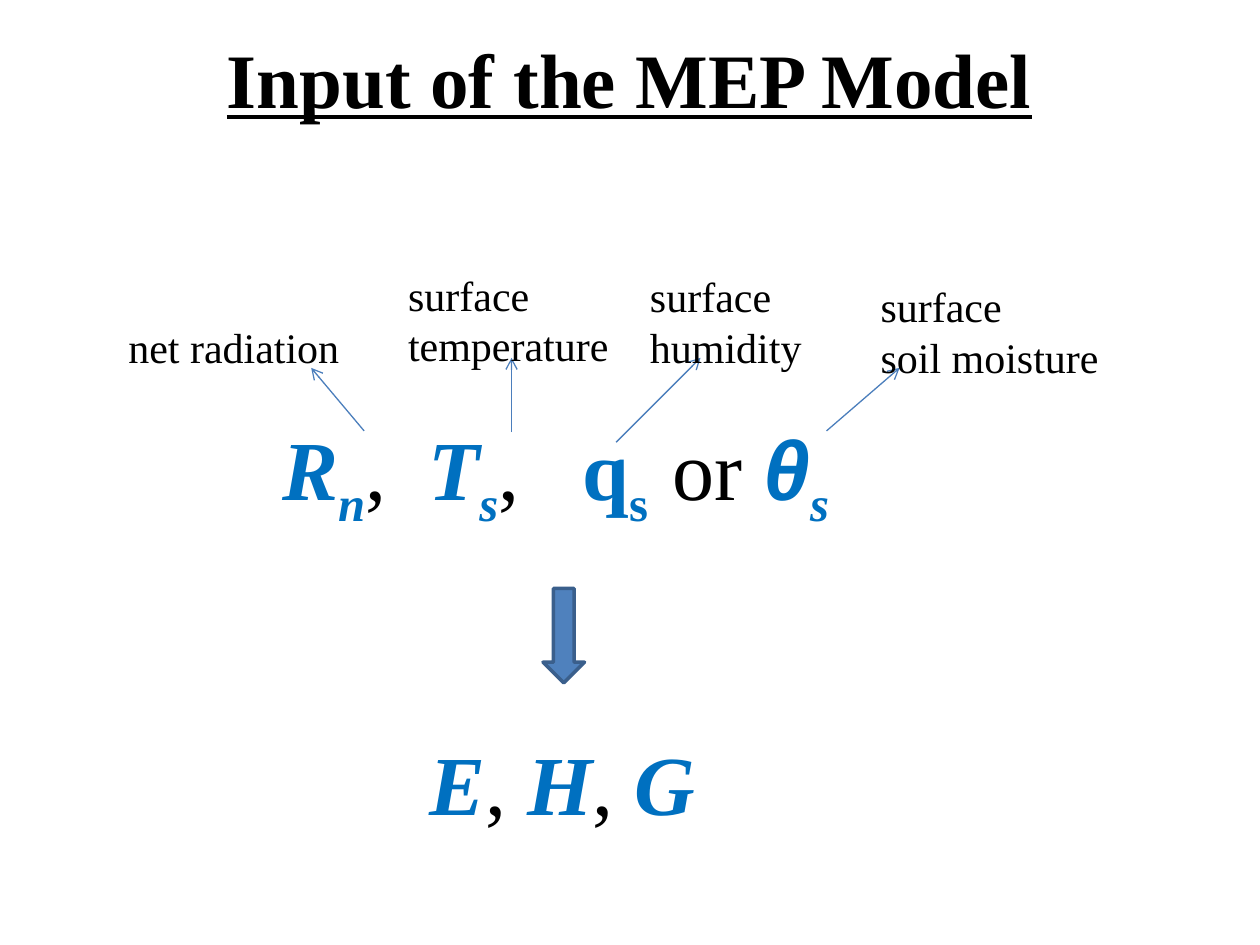
from lxml import etree
from pptx import Presentation
from pptx.dml.color import RGBColor
from pptx.enum.shapes import MSO_CONNECTOR, MSO_SHAPE
from pptx.enum.text import MSO_ANCHOR, PP_ALIGN
from pptx.oxml.ns import qn
from pptx.util import Inches, Pt

STRAIGHT = MSO_CONNECTOR.STRAIGHT
DOWN_ARROW = MSO_SHAPE.DOWN_ARROW
MIDDLE = MSO_ANCHOR.MIDDLE
CENTER = PP_ALIGN.CENTER

BLACK = RGBColor(0x00, 0x00, 0x00)
SYMBOL_BLUE = RGBColor(0x00, 0x70, 0xC0)
ARROW_FILL = RGBColor(0x4F, 0x81, 0xBD)
ARROW_EDGE = RGBColor(0x3A, 0x5F, 0x8C)
POINTER_BLUE = RGBColor(0x4B, 0x7E, 0xBC)
SERIF = "Times New Roman"
SANS = "Arial"

PLAIN = {"color": BLACK}
UPRIGHT = {"color": SYMBOL_BLUE, "bold": True}
SYMBOL = {**UPRIGHT, "italic": True}
SUBSCRIPT = {**SYMBOL, "baseline": -25000}
UPRIGHT_SUBSCRIPT = {**UPRIGHT, "baseline": -25000}

INPUTS = [
    ("R", SYMBOL), ("n", SUBSCRIPT), (",  ", PLAIN),
    ("T", SYMBOL), ("s", SUBSCRIPT), (",   ", PLAIN),
    ("q", UPRIGHT), ("s  ", UPRIGHT_SUBSCRIPT), ("or ", PLAIN),
    ("θ", {**SYMBOL, "face": SANS}), ("s", SUBSCRIPT),
]
OUTPUTS = [("E", SYMBOL), (", ", PLAIN), ("H", SYMBOL), (", ", PLAIN), ("G", SYMBOL)]

LABELS = [
    (["net radiation"], (0.92, 2.5, 1.89, 0.5), False),
    (["surface", "temperature"], (3.14, 2.09, 1.92, 0.91), True),
    (["surface", "humidity"], (5.06, 2.1, 1.42, 0.91), True),
    (["surface", "soil moisture"], (6.89, 2.18, 2.17, 0.91), True),
]
POINTERS = [
    (2.89, 3.42, 2.47, 2.92),
    (4.06, 3.43, 4.06, 2.84),
    (4.89, 3.51, 5.56, 2.84),
    (6.56, 3.42, 7.14, 2.92),
]


def inches(values):
    """Convert a sequence of numbers to lengths."""
    return [Inches(value) for value in values]


def add_run(paragraph, text, size, color, bold=False, italic=False, face=SERIF, baseline=0):
    """Append one formatted run and return it."""
    run = paragraph.add_run()
    run.text = text
    run.font.size = Pt(size)
    run.font.name = face
    run.font.bold = bold
    run.font.italic = italic
    run.font.color.rgb = color
    if baseline:
        run.font._element.set("baseline", str(baseline))
    return run


def add_title(slide, box):
    """Place and format the slide title."""
    title = slide.shapes.title
    title.left, title.top, title.width, title.height = inches(box)
    title.text_frame.vertical_anchor = MIDDLE
    paragraph = title.text_frame.paragraphs[0]
    paragraph.alignment = CENTER
    heading = add_run(paragraph, "Input of the MEP Model", 44, BLACK, bold=True)
    heading.font.underline = True


def add_text(slide, box, lines, size, wrap=True):
    """Add a text box whose lines are lists of (text, style) runs."""
    frame = slide.shapes.add_textbox(*inches(box)).text_frame
    frame.word_wrap = wrap
    for index, runs in enumerate(lines):
        paragraph = frame.add_paragraph() if index else frame.paragraphs[0]
        for text, style in runs:
            add_run(paragraph, text, size, **style)


def add_down_arrow(slide, box):
    """Add the block arrow from the inputs to the outputs."""
    arrow = slide.shapes.add_shape(DOWN_ARROW, *inches(box))
    arrow.shadow.inherit = False
    arrow.fill.solid()
    arrow.fill.fore_color.rgb = ARROW_FILL
    arrow.line.color.rgb = ARROW_EDGE
    arrow.line.width = Pt(2)


def add_pointer(slide, ends):
    """Add a thin arrow from a symbol to its label."""
    pointer = slide.shapes.add_connector(STRAIGHT, *inches(ends))
    pointer.line.color.rgb = POINTER_BLUE
    pointer.line.width = Pt(0.75)
    etree.SubElement(pointer.line._get_or_add_ln(), qn("a:tailEnd"), type="arrow")
    etree.SubElement(pointer._element.spPr, qn("a:effectLst"))


def main():
    """Build the slide and save it."""
    prs = Presentation()
    prs.slide_width, prs.slide_height = inches((10, 7.5))
    slide = prs.slides.add_slide(prs.slide_layouts[5])
    add_title(slide, (0.5, 0, 8.99, 1.24))
    add_text(slide, (2.14, 3.26, 4.75, 0.91), [INPUTS], 48)
    add_down_arrow(slide, (4.31, 4.67, 0.33, 0.75))
    add_text(slide, (3.31, 5.76, 2.33, 0.91), [OUTPUTS], 48, wrap=False)
    for ends in POINTERS:
        add_pointer(slide, ends)
    for words, box, wrap in LABELS:
        add_text(slide, box, [[(word, PLAIN)] for word in words], 24, wrap)
    prs.save("out.pptx")


if __name__ == "__main__":
    main()
